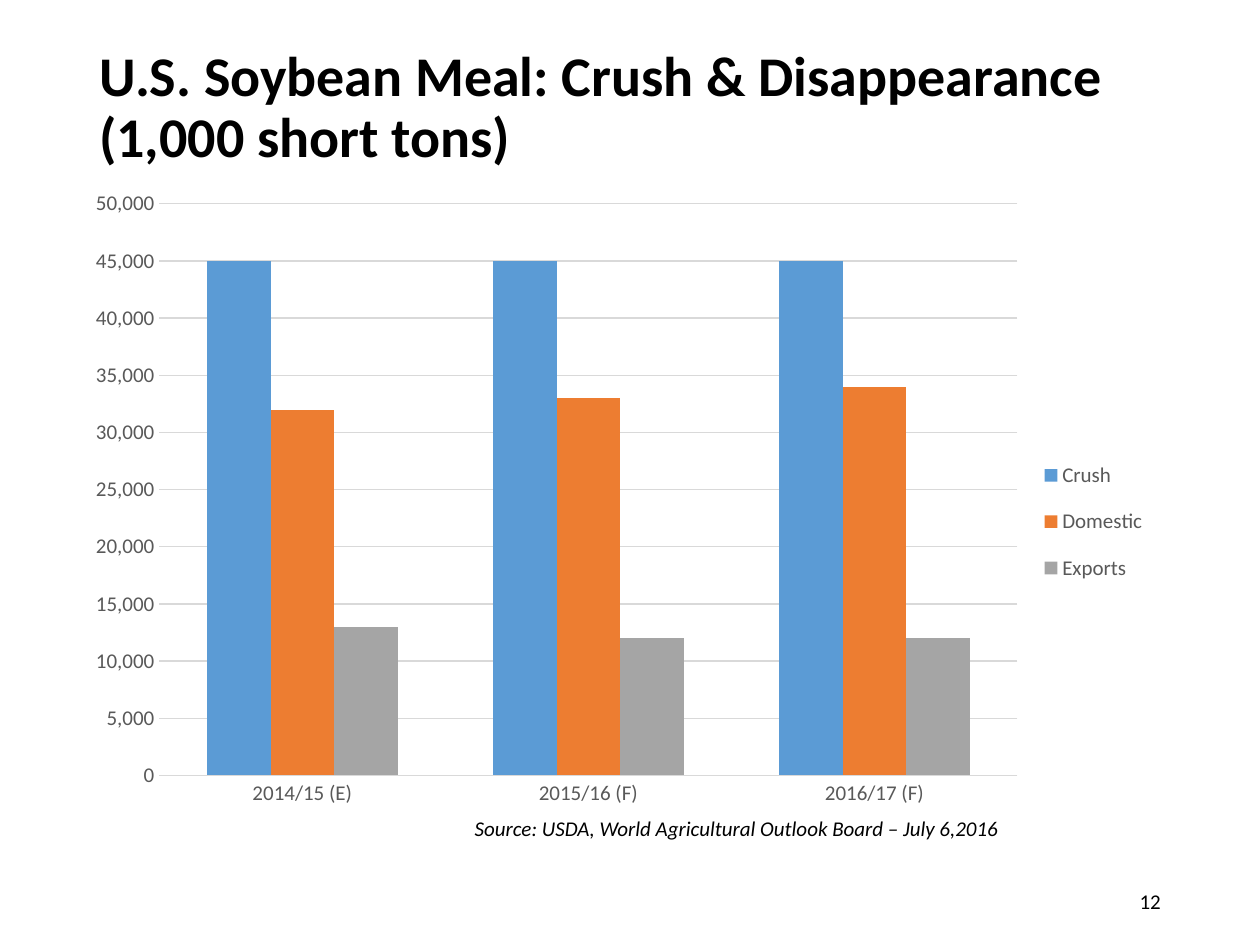
from lxml import etree
from pptx import Presentation
from pptx.chart.data import CategoryChartData
from pptx.dml.color import RGBColor
from pptx.enum.chart import XL_CHART_TYPE, XL_LEGEND_POSITION, XL_TICK_MARK
from pptx.enum.text import MSO_ANCHOR, PP_ALIGN
from pptx.oxml.ns import qn
from pptx.util import Cm, Pt

CLUSTERED = XL_CHART_TYPE.COLUMN_CLUSTERED
LEGEND_RIGHT = XL_LEGEND_POSITION.RIGHT
NO_TICK = XL_TICK_MARK.NONE
TOP, MIDDLE = MSO_ANCHOR.TOP, MSO_ANCHOR.MIDDLE
LEFT, RIGHT = PP_ALIGN.LEFT, PP_ALIGN.RIGHT

COLOURS = {
    "text": "000000",
    "label": "595959",
    "grid": "D9D9D9",
    "Crush": "5B9BD5",
    "Domestic": "ED7D31",
    "Exports": "A5A5A5",
}
YEARS = ["2014/15 (E)", "2015/16 (F)", "2016/17 (F)"]
SUPPLY_USE = {
    "Crush": [45000, 45000, 45000],
    "Domestic": [32000, 33000, 34000],
    "Exports": [13000, 12000, 12000],
}


def colour(name):
    return RGBColor.from_string(COLOURS[name])


def write_text(frame, text, size=12, font="Calibri", bold=False, italic=False,
               align=LEFT, spacing=1.0):
    para = frame.paragraphs[0]
    para.text = text
    para.alignment = align
    para.line_spacing = spacing
    for span in para.runs:
        span.font.name = font
        span.font.size = Pt(size)
        span.font.bold = bold
        span.font.italic = italic
        span.font.color.rgb = colour("text")


def place(parent, index, inner=False, **fractions):
    for old in parent.findall(qn("c:layout")):
        parent.remove(old)
    layout = etree.Element(qn("c:layout"))
    manual = etree.SubElement(layout, qn("c:manualLayout"))
    settings = {"layoutTarget": "inner"} if inner else {}
    settings.update(xMode="edge", yMode="edge", **fractions)
    for name, value in settings.items():
        etree.SubElement(manual, qn(f"c:{name}")).set("val", str(value))
    parent.insert(index, layout)


class SlideBuilder:
    def __init__(self, deck, font="Calibri"):
        self.font = font
        self.page = deck.slides.add_slide(deck.slide_layouts[6])

    def text(self, text, left, top, width, height, anchor=TOP, **style):
        box = self.page.shapes.add_textbox(Cm(left), Cm(top), Cm(width), Cm(height))
        frame = box.text_frame
        frame.word_wrap = True
        frame.vertical_anchor = anchor
        write_text(frame, text, font=self.font, **style)

    def style_label(self, font):
        font.name = self.font
        font.size = Pt(12)
        font.color.rgb = colour("label")

    def column_chart(self, categories, values, left, top, width, height):
        data = CategoryChartData(number_format="#,##0")
        data.categories = categories
        for name, numbers in values.items():
            data.add_series(name, numbers)
        chart = self.page.shapes.add_chart(
            CLUSTERED, Cm(left), Cm(top), Cm(width), Cm(height), data).chart
        chart.has_title = False
        chart.font.name = self.font
        chart.font.size = Pt(10)
        chart.font.color.rgb = colour("text")

        plot = chart.plots[0]
        plot.gap_width = 150
        plot.overlap = 0
        plot.vary_by_categories = False
        for series in plot.series:
            series.format.fill.solid()
            series.format.fill.fore_color.rgb = colour(series.name)

        for axis in (chart.category_axis, chart.value_axis):
            axis.major_tick_mark = axis.minor_tick_mark = NO_TICK
            axis.format.line.fill.background()
            self.style_label(axis.tick_labels.font)
        amounts = chart.value_axis
        amounts.minimum_scale, amounts.maximum_scale = 0, 50000
        amounts.major_unit = 5000
        amounts.tick_labels.number_format = "#,##0"
        amounts.tick_labels.number_format_is_linked = False
        grid = amounts.major_gridlines.format.line
        grid.width = Pt(0.75)
        grid.color.rgb = colour("grid")

        chart.has_legend = True
        legend = chart.legend
        legend.position = LEGEND_RIGHT
        legend.include_in_layout = False
        self.style_label(legend.font)
        plot_area = chart.element.find(".//" + qn("c:plotArea"))
        place(plot_area, 0, inner=True, x=0.08, y=0.04, w=0.79, h=0.89)
        place(chart.element.find(".//" + qn("c:legend")), 1,
              x=0.88, y=0.41, w=0.12, h=0.25)


def main():
    deck = Presentation()
    deck.slide_width, deck.slide_height = Cm(25.4), Cm(19.05)
    builder = SlideBuilder(deck)
    builder.text("U.S. Soybean Meal: Crush & Disappearance\v(1,000 short tons)",
                 1.75, 1.02, 21.9, 2.36, anchor=MIDDLE, size=32, bold=True,
                 spacing=0.9)
    builder.column_chart(YEARS, SUPPLY_USE, 1.46, 3.59, 21.9, 12.95)
    builder.text("12", 17.93, 17.65, 5.72, 1.02, anchor=MIDDLE, align=RIGHT)
    builder.text("Source: USDA, World Agricultural Outlook Board – July 6,2016",
                 9.32, 16.32, 13.34, 0.76, italic=True)
    deck.save("out.pptx")


if __name__ == "__main__":
    main()
